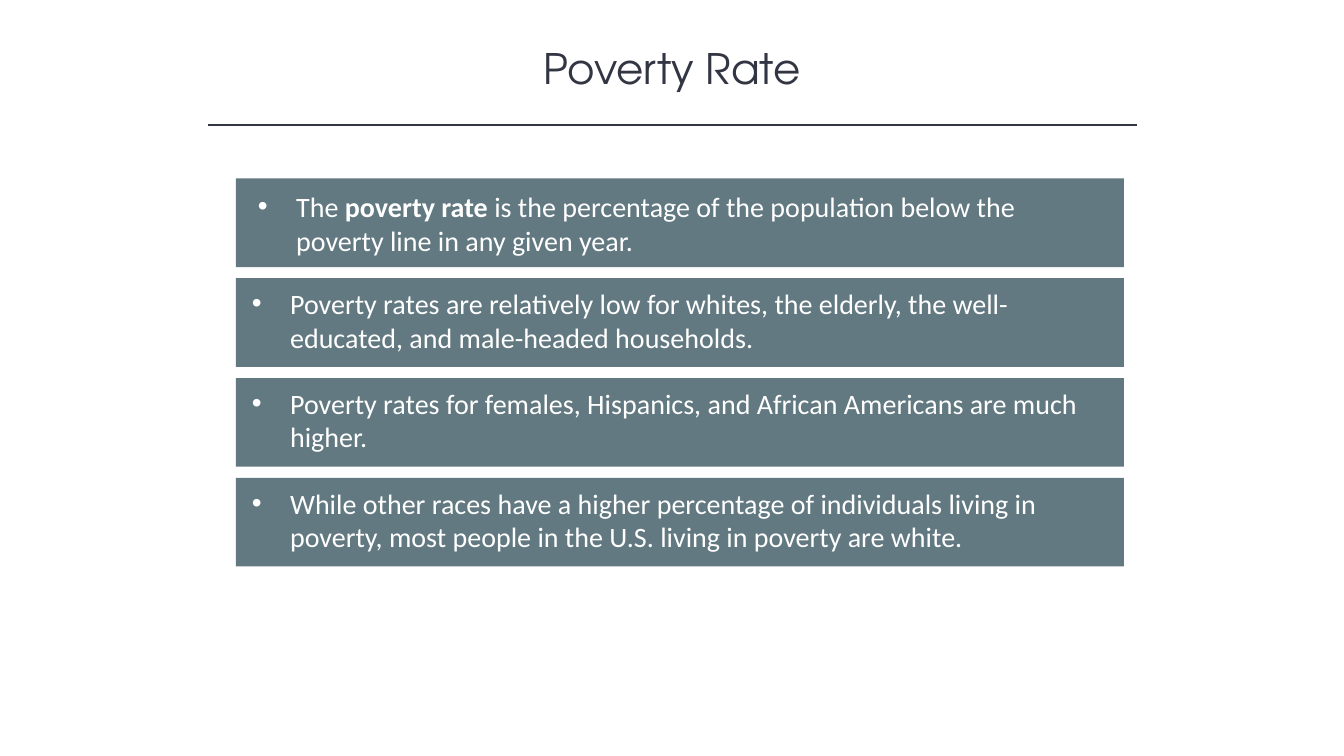
from lxml.etree import SubElement
from pptx import Presentation
from pptx.dml.color import RGBColor
from pptx.enum.shapes import MSO_CONNECTOR, MSO_SHAPE
from pptx.enum.text import MSO_ANCHOR, PP_ALIGN
from pptx.oxml.ns import qn
from pptx.util import Inches, Pt

COLORS = {"ink": "323542", "card": "627981", "card_text": "FFFFFF"}
TITLE_FONT, BODY_FONT = "TeX Gyre Adventor", "Calibri"
SLIDE_WIDTH, SLIDE_HEIGHT = Inches(13.33), Inches(7.5)

TITLE_BOX = (12.5, 4.93, 75, 8.13)
RULE_BOX = (15.45, 16.53, 69.17, 0)
CARDS_BOX = (17.55, 23.6, 66.08, 51.33)
CARD_HEIGHT = 11.73
TEXT_SIZE = (64.05, 10.27)
FIRST_INSET, INSET = (0.9, 0.8), (0.45, 0.45)
BULLET_INDENT = Inches(0.38)

STATEMENTS = [
    [("The ", False), ("poverty rate ", True),
     ("is the percentage of the population below the poverty line in any given year.", False)],
    [("Poverty rates are relatively low for whites, the elderly, the well-educated, "
      "and male-headed households.", False)],
    [("Poverty rates for females, Hispanics, and African Americans are much higher.", False)],
    [("While other races have a higher percentage of individuals living in poverty, "
      "most people in the U.S. living in poverty are white.", False)],
]


def color(name):
    return RGBColor.from_string(COLORS[name])


def to_slide(box):
    left, top, width, height = box
    return (round(SLIDE_WIDTH * left / 100), round(SLIDE_HEIGHT * top / 100),
            round(SLIDE_WIDTH * width / 100), round(SLIDE_HEIGHT * height / 100))


def format_run(run, font, size, color_name, bold=False):
    run.font.name = font
    run.font.size = Pt(size)
    run.font.bold = bold
    run.font.color.rgb = color(color_name)


def add_title(slide, box, text):
    title = slide.shapes.title
    title.left, title.top, title.width, title.height = to_slide(box)
    frame = title.text_frame
    frame.text = text
    frame.vertical_anchor = MSO_ANCHOR.MIDDLE
    paragraph = frame.paragraphs[0]
    paragraph.alignment = PP_ALIGN.CENTER
    format_run(paragraph.runs[0], TITLE_FONT, 30, "ink")


def add_rule(slide, box):
    left, top, width, height = to_slide(box)
    rule = slide.shapes.add_connector(
        MSO_CONNECTOR.STRAIGHT, left, top, left + width, top + height)
    rule.line.color.rgb = color("ink")
    rule.line.width = Pt(1)
    SubElement(rule.element.spPr, qn("a:effectLst"))


def add_panel(group, box):
    panel = group.shapes.add_shape(MSO_SHAPE.RECTANGLE, *to_slide(box))
    panel.shadow.inherit = False
    panel.fill.solid()
    panel.fill.fore_color.rgb = color("card")
    panel.line.fill.background()
    return panel


def add_bullet(paragraph):
    properties = paragraph._p.get_or_add_pPr()
    properties.set("marL", str(BULLET_INDENT))
    properties.set("indent", str(-BULLET_INDENT))
    SubElement(properties, qn("a:buFont"), typeface="Arial")
    SubElement(properties, qn("a:buChar"), char="•")


def add_card(slide, box, inset, statement):
    group = slide.shapes.add_group_shape()
    add_panel(group, box)
    label = add_panel(group, (box[0] + inset[0], box[1] + inset[1], *TEXT_SIZE))
    frame = label.text_frame
    frame.word_wrap = True
    frame.vertical_anchor = MSO_ANCHOR.TOP
    paragraph = frame.paragraphs[0]
    paragraph.alignment = PP_ALIGN.LEFT
    add_bullet(paragraph)
    for text, bold in statement:
        run = paragraph.add_run()
        run.text = text
        format_run(run, BODY_FONT, 20, "card_text", bold)


def add_cards(slide, box, statements):
    left, top, width, height = box
    pitch = (height - CARD_HEIGHT) / (len(statements) - 1)
    for row, statement in enumerate(statements):
        inset = INSET if row else FIRST_INSET
        add_card(slide, (left, top + row * pitch, width, CARD_HEIGHT), inset, statement)


def main():
    presentation = Presentation()
    presentation.slide_width, presentation.slide_height = SLIDE_WIDTH, SLIDE_HEIGHT
    slide = presentation.slides.add_slide(presentation.slide_layouts.get_by_name("Title Only"))
    add_title(slide, TITLE_BOX, "Poverty Rate")
    add_rule(slide, RULE_BOX)
    add_cards(slide, CARDS_BOX, STATEMENTS)
    presentation.save("out.pptx")


if __name__ == "__main__":
    main()
